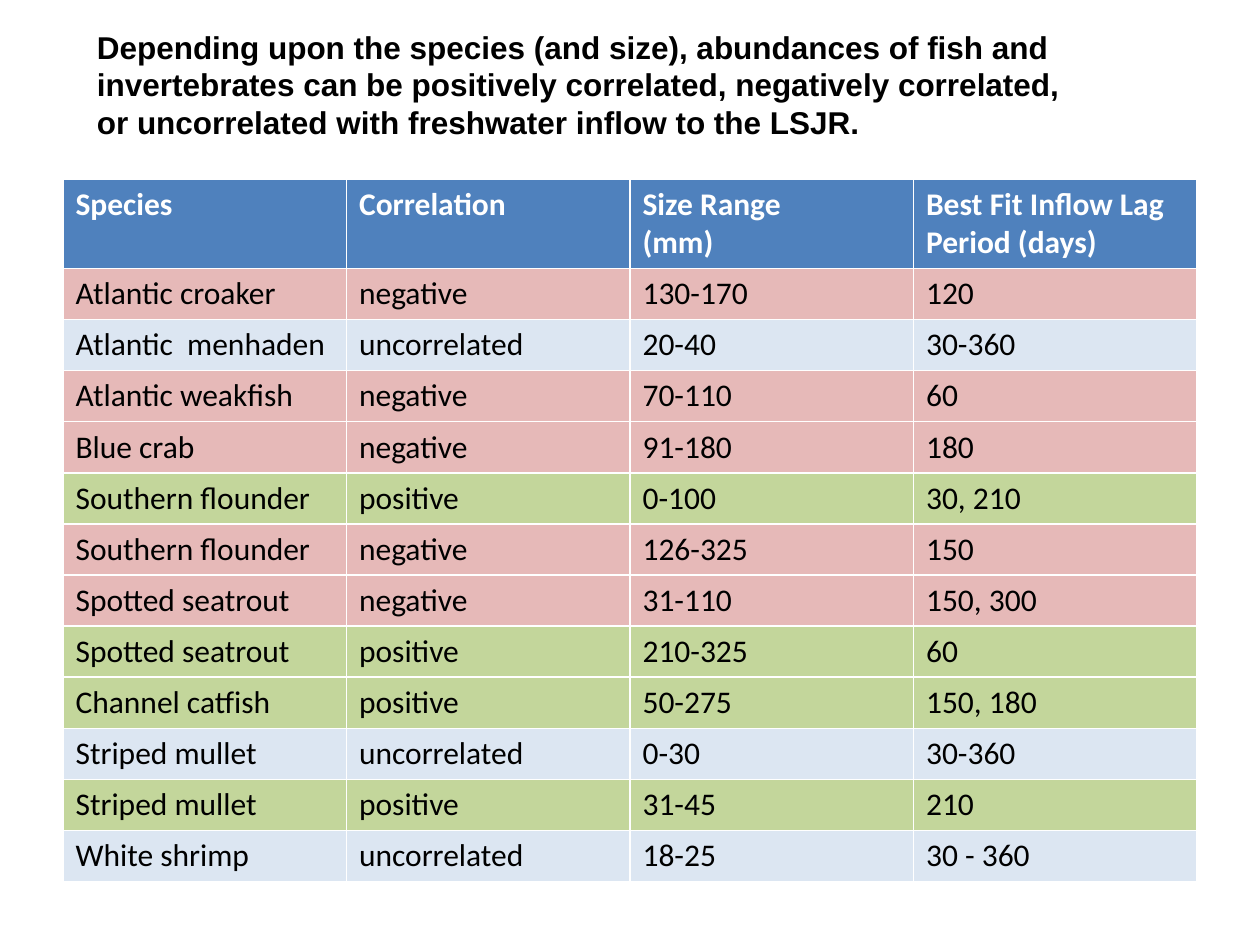
from pptx import Presentation
from pptx.dml.color import RGBColor
from pptx.enum import text
from pptx.util import Inches, Pt

TITLE = (
    "Depending upon the species (and size), abundances of fish and "
    "invertebrates can be positively correlated, negatively correlated, "
    "or uncorrelated with freshwater inflow to the LSJR."
)
HEAD = ("Species", "Correlation", "Size Range\n(mm)", "Best Fit Inflow Lag Period (days)")
ROWS = [
    ("Atlantic croaker", "negative", "130-170", "120"),
    ("Atlantic  menhaden", "uncorrelated", "20-40", "30-360"),
    ("Atlantic weakfish", "negative", "70-110", "60"),
    ("Blue crab", "negative", "91-180", "180"),
    ("Southern flounder", "positive", "0-100", "30, 210"),
    ("Southern flounder", "negative", "126-325", "150"),
    ("Spotted seatrout", "negative", "31-110", "150, 300"),
    ("Spotted seatrout", "positive", "210-325", "60"),
    ("Channel catfish", "positive", "50-275", "150, 180"),
    ("Striped mullet", "uncorrelated", "0-30", "30-360"),
    ("Striped mullet", "positive", "31-45", "210"),
    ("White shrimp", "uncorrelated", "18-25", "30 - 360"),
]
THEME = {
    "size": 18,
    "title": "Arial",
    "body": "Calibri",
    "dark": "000000",
    "light": "FFFFFF",
    "head": "4F81BD",
    "negative": "E6B9B8",
    "uncorrelated": "DCE6F2",
    "positive": "C3D69B",
}
WIDTH, HEIGHT, TOP = 9, 5.57, 0.7


def style(frame, face, color, bold):
    for para in frame.paragraphs:
        font = para.font
        font.name = THEME[face]
        font.size = Pt(THEME["size"])
        font.bold = bold
        font.color.rgb = RGBColor.from_string(THEME[color])


def add_title(slide):
    box = slide.shapes.add_textbox(Inches(0.67), Inches(0.17), Inches(7.92), Inches(1.01))
    frame = box.text_frame
    frame.word_wrap = True
    frame.auto_size = text.MSO_AUTO_SIZE.SHAPE_TO_FIT_TEXT
    frame.text = TITLE
    style(frame, "title", "dark", True)


def add_grid(slide):
    data = [HEAD, *ROWS]
    table = slide.shapes.add_table(
        len(data), len(HEAD), Inches(0.5), Inches(1.42), Inches(WIDTH), Inches(HEIGHT)
    ).table
    for col in table.columns:
        col.width = Inches(WIDTH / len(HEAD))
    for r, row in enumerate(data):
        first = r == 0
        table.rows[r].height = Inches(TOP if first else (HEIGHT - TOP) / len(ROWS))
        fill = THEME["head" if first else row[1]]
        for c, value in enumerate(row):
            cell = table.cell(r, c)
            cell.text = value
            cell.fill.solid()
            cell.fill.fore_color.rgb = RGBColor.from_string(fill)
            style(cell.text_frame, "body", "light" if first else "dark", first)


def main():
    deck = Presentation()
    deck.slide_width, deck.slide_height = Inches(10), Inches(7.5)
    slide = deck.slides.add_slide(deck.slide_layouts[6])
    add_grid(slide)
    add_title(slide)
    deck.save("out.pptx")


if __name__ == "__main__":
    main()
